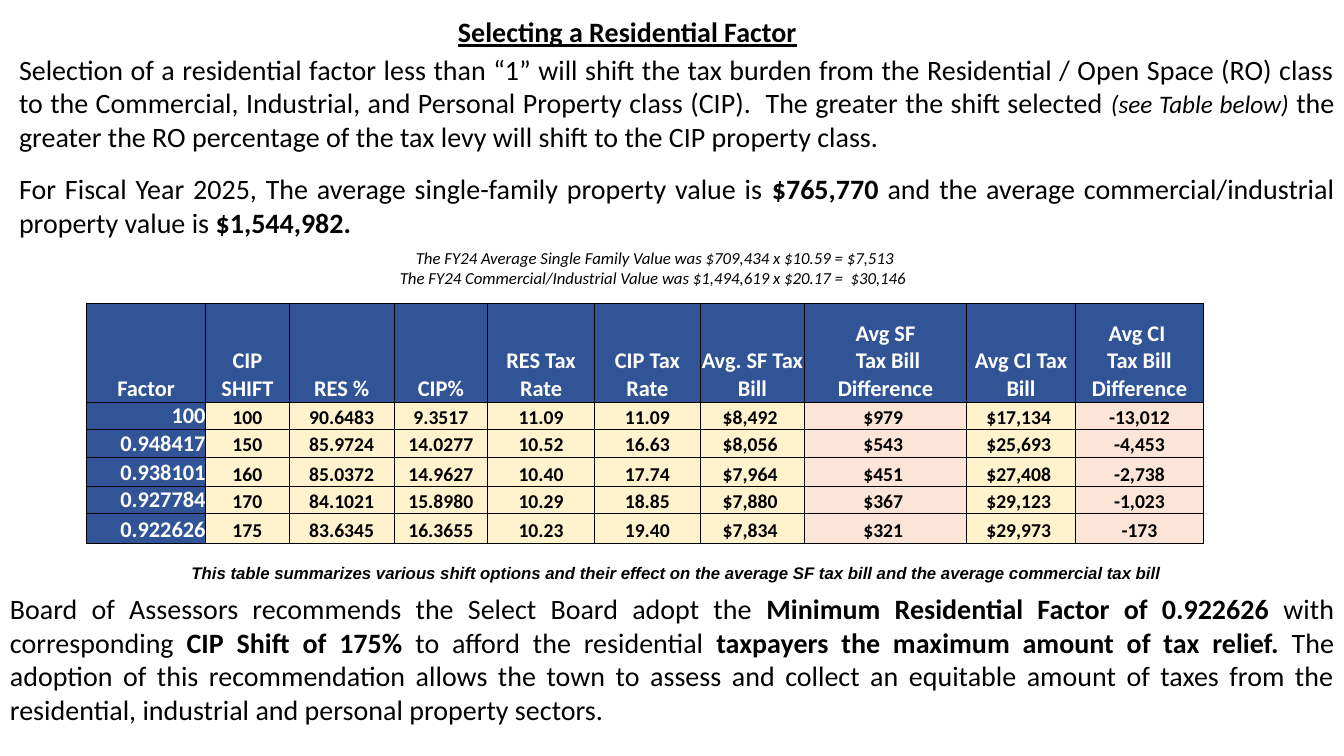
import dataclasses
import typing

import pptx
import pptx.dml.color
import pptx.enum.text
import pptx.oxml
import pptx.oxml.ns
import pptx.slide
import pptx.table
import pptx.text.text
import pptx.util

Cm = pptx.util.Cm
Pt = pptx.util.Pt
Align = pptx.enum.text.PP_ALIGN
Format = dict[str, typing.Any]

BLACK = pptx.dml.color.RGBColor(0x00, 0x00, 0x00)
WHITE = pptx.dml.color.RGBColor(0xFF, 0xFF, 0xFF)
BLUE = pptx.dml.color.RGBColor(0x30, 0x54, 0x96)
CREAM = pptx.dml.color.RGBColor(0xFF, 0xF2, 0xCC)
PEACH = pptx.dml.color.RGBColor(0xFC, 0xE4, 0xD6)

BODY: Format = {"name": "Calibri", "size": Pt(20)}
STRONG: Format = BODY | {"bold": True}
TITLE: Format = STRONG | {"underline": True}
ASIDE: Format = BODY | {"size": Pt(18), "italic": True}
PRIOR_YEAR: Format = BODY | {"size": Pt(12), "italic": True}
CAPTION: Format = {"name": "Arial", "size": Pt(12), "bold": True, "italic": True}
LABEL: Format = STRONG | {"size": Pt(16)}
VALUE: Format = STRONG | {"size": Pt(14)}


@dataclasses.dataclass(frozen=True)
class Span:
    text: str
    style: Format


@dataclasses.dataclass(frozen=True)
class TextBlock:
    left: float
    top: float
    width: float
    height: float
    align: Align
    paras: list[list[Span]]
    wrap: bool = True
    gap: float = 0
    left_inset: float = 0.25


@dataclasses.dataclass(frozen=True)
class Column:
    heading: str
    width: float
    values: list[str]
    fill: pptx.dml.color.RGBColor = CREAM


BLOCKS = [
    TextBlock(0, 14.78, 33.87, 3.68, Align.JUSTIFY, [[
        Span("Board of Assessors recommends the Select Board adopt the ", BODY),
        Span("Minimum Residential Factor of 0.922626", STRONG),
        Span(" with corresponding ", BODY),
        Span("CIP Shift of 175%", STRONG),
        Span(" to afford the residential ", BODY),
        Span("taxpayers the maximum amount of tax relief. ", STRONG),
        Span("The adoption of this recommendation allows the town to assess and collect an "
             "equitable amount of taxes from the residential, industrial and personal "
             "property sectors. ", BODY),
    ]]),
    TextBlock(0.23, 14.05, 33.65, 0.76, Align.CENTER, [[
        Span("This table summarizes various shift options and their effect on the average "
             "SF tax bill and the average commercial tax bill", CAPTION),
    ]]),
    TextBlock(11.25, 0.25, 9.12, 1.12, Align.CENTER,
              [[Span("Selecting a Residential Factor", TITLE)]], wrap=False),
    TextBlock(0.23, 1.19, 33.65, 5.0, Align.JUSTIFY, [
        [
            Span("Selection of a residential factor less than “1” will shift the tax burden "
                 "from the Residential / Open Space (RO) class to the Commercial, Industrial, "
                 "and Personal Property class (CIP).  The greater the shift selected ", BODY),
            Span("(see Table below)", ASIDE),
            Span(" the greater the RO percentage of the tax levy will shift to the CIP "
                 "property class. ", BODY),
        ],
        [
            Span("For Fiscal Year 2025, The average single-family property value is ", BODY),
            Span("$765,770 ", STRONG),
            Span("and the average commercial/industrial property value is ", BODY),
            Span("$1,544,982. ", STRONG),
        ],
    ], gap=13.4),
    TextBlock(2.18, 6.12, 28.17, 1.27, Align.CENTER, [
        [Span("The FY24 Average Single Family Value was $709,434 x $10.59 = $7,513", PRIOR_YEAR)],
        [Span("The FY24 Commercial/Industrial Value was $1,494,619 x $20.17 =  $30,146 ",
              PRIOR_YEAR)],
    ], left_inset=0.74),
]

COLUMNS = [
    Column("Factor", 3.0, ["100", "0.948417", "0.938101", "0.927784", "0.922626"], BLUE),
    Column("CIP SHIFT", 2.11, ["100", "150", "160", "170", "175"]),
    Column("RES %", 2.64, ["90.6483", "85.9724", "85.0372", "84.1021", "83.6345"]),
    Column("CIP%", 2.36, ["9.3517", "14.0277", "14.9627", "15.8980", "16.3655"]),
    Column("RES Tax Rate", 2.69, ["11.09", "10.52", "10.40", "10.29", "10.23"]),
    Column("CIP Tax Rate", 2.67, ["11.09", "16.63", "17.74", "18.85", "19.40"]),
    Column("Avg. SF Tax Bill", 2.62, ["$8,492 ", "$8,056 ", "$7,964 ", "$7,880 ", "$7,834 "]),
    Column("Avg SF\n Tax Bill Difference", 4.09,
           ["$979 ", "$543 ", "$451 ", "$367 ", "$321 "], PEACH),
    Column("Avg CI Tax Bill", 2.74,
           ["$17,134 ", "$25,693 ", "$27,408 ", "$29,123 ", "$29,973 "]),
    Column("Avg CI \nTax Bill Difference", 3.23,
           ["-13,012", "-4,453", "-2,738", "-1,023", "-173"], PEACH),
]
ROW_HEIGHTS = [2.49, 0.69, 0.69, 0.74, 0.69, 0.74]


def apply(target: typing.Any, values: Format) -> None:
    for name, value in values.items():
        setattr(target, name, value)


def add_span(para: typing.Any, span: Span, color: pptx.dml.color.RGBColor) -> None:
    run = para.add_run()
    run.text = span.text
    apply(run.font, span.style)
    run.font.color.rgb = color


def add_block(page: pptx.slide.Slide, block: TextBlock) -> None:
    box = page.shapes.add_textbox(
        Cm(block.left), Cm(block.top), Cm(block.width), Cm(block.height))
    frame = box.text_frame
    apply(frame, {
        "word_wrap": block.wrap,
        "auto_size": pptx.enum.text.MSO_AUTO_SIZE.SHAPE_TO_FIT_TEXT,
        "margin_left": Cm(block.left_inset),
    })
    for index, spans in enumerate(block.paras):
        para = frame.add_paragraph() if index else frame.paragraphs[0]
        apply(para, {"alignment": block.align, "space_before": Pt(block.gap if index else 0)})
        for span in spans:
            add_span(para, span, BLACK)


def add_border(cell: typing.Any, side: str, points: float) -> None:
    cell._tc.get_or_add_tcPr().append(pptx.oxml.parse_xml(
        f'<a:ln{side} {pptx.oxml.ns.nsdecls("a")} w="{int(Pt(points))}">'
        f'<a:solidFill><a:srgbClr val="{BLACK}"/></a:solidFill></a:ln{side}>'))


def fill_cell(cell: typing.Any, text: str, style: Format, align: Align,
              fill: pptx.dml.color.RGBColor, heavy_sides: str) -> None:
    for side in "LRTB":
        add_border(cell, side, 1 if side in heavy_sides else 0.5)
    cell.fill.solid()
    cell.fill.fore_color.rgb = fill
    apply(cell, {
        "vertical_anchor": pptx.enum.text.MSO_ANCHOR.BOTTOM,
        "margin_left": 0, "margin_right": 0, "margin_top": 0, "margin_bottom": 0,
    })
    for index, line in enumerate(text.split("\n")):
        para = cell.text_frame.add_paragraph() if index else cell.text_frame.paragraphs[0]
        para.alignment = align
        add_span(para, Span(line, style), WHITE if fill == BLUE else BLACK)


def add_shift_table(page: pptx.slide.Slide) -> None:
    width = sum(column.width for column in COLUMNS)
    table = page.shapes.add_table(
        len(ROW_HEIGHTS), len(COLUMNS), Cm(2.18), Cm(7.65), Cm(width),
        Cm(sum(ROW_HEIGHTS))).table
    apply(table, {"first_row": False, "horz_banding": False})
    for row, height in zip(table.rows, ROW_HEIGHTS):
        row.height = Cm(height)
    last_row, last_column = len(ROW_HEIGHTS) - 1, len(COLUMNS) - 1
    for x, column in enumerate(COLUMNS):
        table.columns[x].width = Cm(column.width)
        for y, text in enumerate([column.heading] + column.values):
            fill = column.fill if y else BLUE
            heavy_sides = (("L" if x == 0 else "") + ("R" if x == last_column else "")
                           + ("B" if y == last_row else ""))
            fill_cell(table.cell(y, x), text, LABEL if fill == BLUE else VALUE,
                      Align.RIGHT if y and x == 0 else Align.CENTER, fill, heavy_sides)


def main() -> None:
    deck = pptx.Presentation()
    apply(deck, {"slide_width": Cm(33.87), "slide_height": Cm(19.05)})
    page = deck.slides.add_slide(deck.slide_layouts[6])
    for block in BLOCKS:
        add_block(page, block)
    add_shift_table(page)
    deck.save("out.pptx")


if __name__ == "__main__":
    main()
